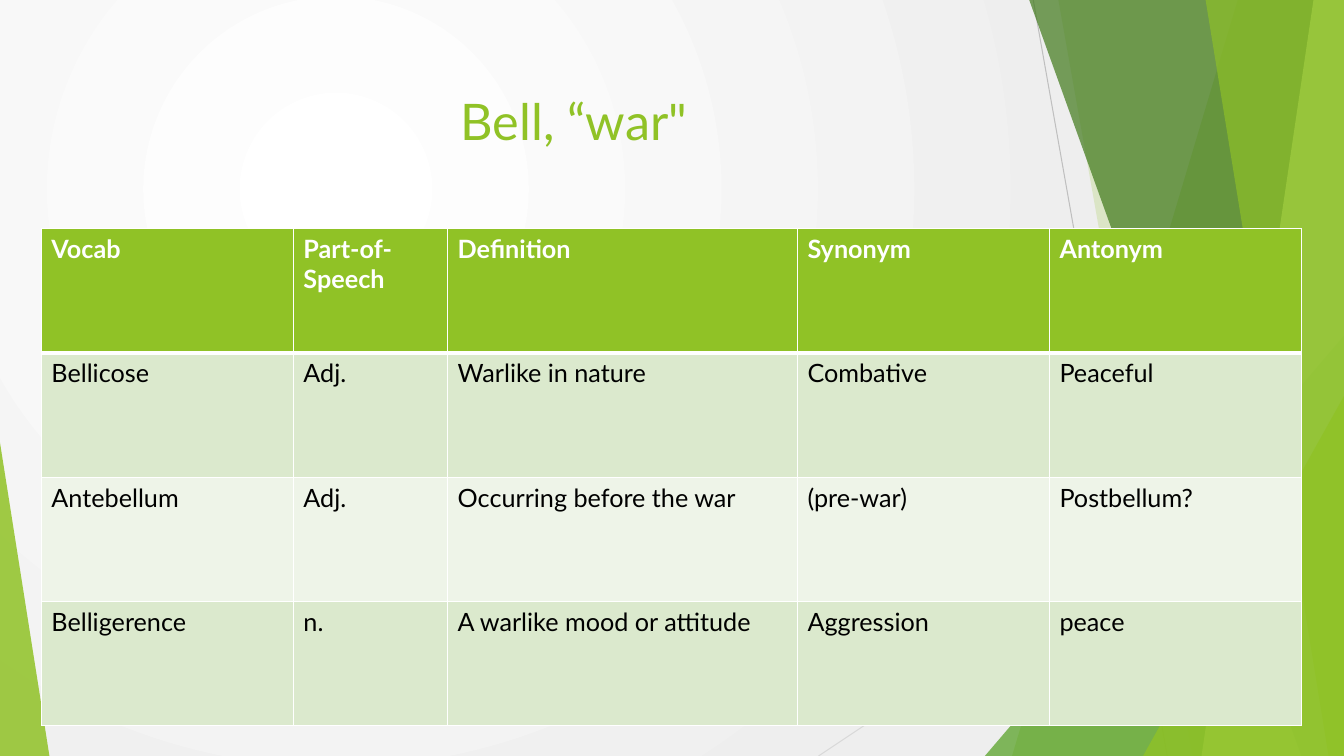
import dataclasses

import lxml.etree
import pptx
import pptx.dml.color
import pptx.enum.dml
import pptx.enum.shapes
import pptx.oxml.ns
import pptx.util

WIDTH = pptx.util.Inches(13.33)
HEIGHT = pptx.util.Inches(7.5)
FONT = "Lato"
GREEN = "90C226"
WHITE = "FFFFFF"
BLACK = "000000"
ROW_FILLS = [GREEN, "DBE9CD", "EEF4E8", "DBE9CD"]
TABLE_LEFT, TABLE_TOP, ROW_SHARE = 3.08, 30.27, 16.43
COLUMN_SHARES = [18.75, 11.48, 26.03, 18.75, 18.75]
VOCABULARY = [
    ["Vocab", "Part-of-\nSpeech", "Definition", "Synonym", "Antonym"],
    ["Bellicose", "Adj.", "Warlike in nature", "Combative", "Peaceful"],
    ["Antebellum", "Adj.", "Occurring before the war", "(pre-war)", "Postbellum?"],
    ["Belligerence", "n.", "A warlike mood or attitude", "Aggression", "peace"],
]


@dataclasses.dataclass
class Ray:
    start: tuple[float, float]
    end: tuple[float, float]
    color: str


@dataclasses.dataclass
class Band:
    top_x: float
    bottom_x: float
    color: str
    opacity: int


@dataclasses.dataclass
class Corner:
    left: float
    top: float
    width: float
    apex: float
    color: str
    opacity: int


RAYS = [
    Ray((76.88, 0), (86.85, 100), "BFBFBF"),
    Ray((100, 53.73), (60.9, 100), "D9D9D9"),
]
FACETS = [
    Band(92.1, 75.3, GREEN, 30),
    Band(78.75, 88.73, GREEN, 20),
    Corner(73.28, 44.4, 26.72, 1, "54A021", 72),
    Band(76.58, 96.83, "3F7819", 70),
    Band(97.73, 89.4, "C0E474", 70),
    Band(89.7, 98.85, GREEN, 65),
    Corner(85.05, 52.4, 14.95, 1, GREEN, 80),
    Corner(0, 58.53, 3.68, 0, GREEN, 85),
]


def across(share: float) -> int:
    return round(WIDTH * share / 100)


def down(share: float) -> int:
    return round(HEIGHT * share / 100)


def rgb(color: str) -> pptx.dml.color.RGBColor:
    return pptx.dml.color.RGBColor.from_string(color)


def add_child(parent, tag: str, **attributes: str):
    return lxml.etree.SubElement(parent, pptx.oxml.ns.qn(tag), **attributes)


def paint_background(slide) -> None:
    fill = slide.background.fill
    fill.gradient()
    for stop, color in zip(fill.gradient_stops, [WHITE, "EEEEEE"]):
        stop.color.rgb = rgb(color)
    gradient = slide.element.find(".//" + pptx.oxml.ns.qn("a:gradFill"))
    linear = gradient.find(pptx.oxml.ns.qn("a:lin"))
    circle = lxml.etree.Element(pptx.oxml.ns.qn("a:path"), path="circle")
    add_child(circle, "a:fillToRect", l="50000", t="50000", r="100000", b="100000")
    gradient.replace(linear, circle)


def draw_ray(slide, ray: Ray) -> None:
    connector = slide.shapes.add_connector(
        pptx.enum.shapes.MSO_CONNECTOR.STRAIGHT,
        across(ray.start[0]), down(ray.start[1]), across(ray.end[0]), down(ray.end[1]),
    )
    connector.line.color.rgb = rgb(ray.color)
    connector.line.width = pptx.util.Pt(0.75)
    add_child(connector._element.spPr, "a:effectLst")


def draw_facet(slide, facet: Band | Corner) -> None:
    if isinstance(facet, Band):
        builder = slide.shapes.build_freeform(across(facet.top_x), 0)
        builder.add_line_segments(
            [(WIDTH, 0), (WIDTH, HEIGHT), (across(facet.bottom_x), HEIGHT)], close=True
        )
        shape = builder.convert_to_shape()
    else:
        shape = slide.shapes.add_shape(
            pptx.enum.shapes.MSO_SHAPE.ISOSCELES_TRIANGLE,
            across(facet.left), down(facet.top), across(facet.width), down(100 - facet.top),
        )
        shape.adjustments[0] = facet.apex
    shape.shadow.inherit = False
    shape.line.fill.background()
    shape.fill.solid()
    shape.fill.fore_color.rgb = rgb(facet.color)
    color_element = shape._element.spPr.find(".//" + pptx.oxml.ns.qn("a:srgbClr"))
    add_child(color_element, "a:alpha", val=str(facet.opacity * 1000))


def write_text(text_frame, text: str, size: int, color: str, bold: bool = False) -> None:
    for index, line in enumerate(text.split("\n")):
        paragraph = text_frame.add_paragraph() if index else text_frame.paragraphs[0]
        run = paragraph.add_run()
        run.text = line
        run.font.name = FONT
        run.font.size = pptx.util.Pt(size)
        run.font.bold = bold
        run.font.color.rgb = rgb(color)


def draw_title(slide) -> None:
    title = slide.shapes.add_textbox(across(33.53), down(11.2), across(60.98), down(21.47))
    title.text_frame.word_wrap = True
    write_text(title.text_frame, "Bell, “war\"", 36, GREEN)


def set_borders(cell, top: int, bottom: int) -> None:
    properties = cell._tc.get_or_add_tcPr()
    widths = {"a:lnL": 1, "a:lnR": 1, "a:lnT": top, "a:lnB": bottom}
    for index, (tag, width) in enumerate(widths.items()):
        border = lxml.etree.Element(pptx.oxml.ns.qn(tag), w=str(pptx.util.Pt(width)))
        add_child(add_child(border, "a:solidFill"), "a:srgbClr", val=WHITE)
        properties.insert(index, border)


def draw_table(slide) -> None:
    table = slide.shapes.add_table(
        len(VOCABULARY), len(COLUMN_SHARES), across(TABLE_LEFT), down(TABLE_TOP),
        across(sum(COLUMN_SHARES)), down(ROW_SHARE * len(VOCABULARY)),
    ).table
    for column, share in zip(table.columns, COLUMN_SHARES):
        column.width = across(share)
    for row_index, words in enumerate(VOCABULARY):
        table.rows[row_index].height = down(ROW_SHARE)
        header = row_index == 0
        for column_index, text in enumerate(words):
            cell = table.cell(row_index, column_index)
            cell.fill.solid()
            cell.fill.fore_color.rgb = rgb(ROW_FILLS[row_index])
            set_borders(cell, 3 if row_index == 1 else 1, 3 if header else 1)
            write_text(cell.text_frame, text, 18, WHITE if header else BLACK, header)


def main() -> None:
    presentation = pptx.Presentation()
    presentation.slide_width = WIDTH
    presentation.slide_height = HEIGHT
    slide = presentation.slides.add_slide(presentation.slide_layouts[6])
    paint_background(slide)
    for ray in RAYS:
        draw_ray(slide, ray)
    for facet in FACETS:
        draw_facet(slide, facet)
    draw_title(slide)
    draw_table(slide)
    presentation.save("out.pptx")


if __name__ == "__main__":
    main()
